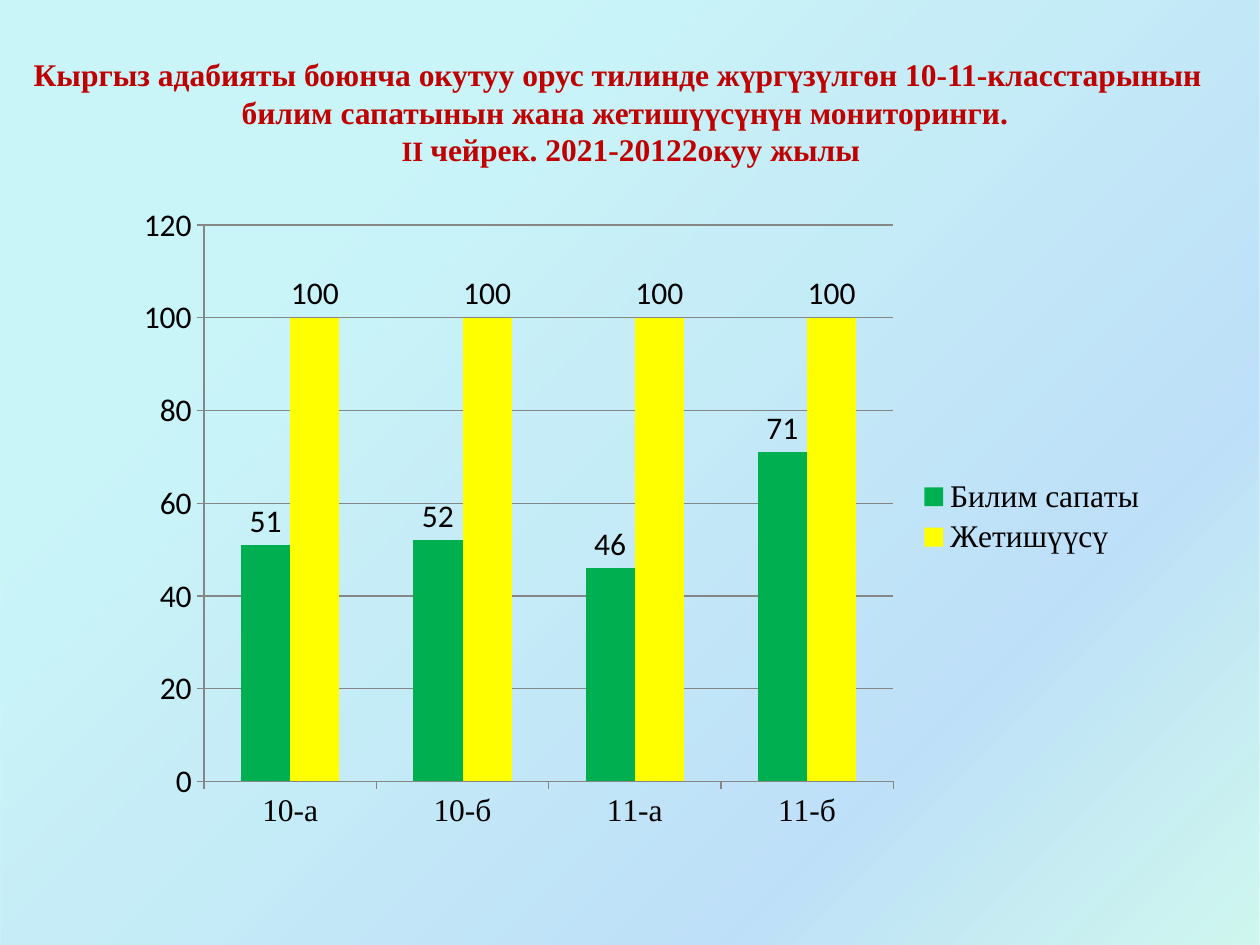
"""Build a slide with a column chart of class quality and achievement."""
from lxml.etree import SubElement
from pptx import Presentation
from pptx.chart.data import CategoryChartData
from pptx.dml.color import RGBColor
from pptx.enum.chart import XL_CHART_TYPE as CT, XL_LABEL_POSITION as LP
from pptx.enum.chart import XL_LEGEND_POSITION as LEG, XL_TICK_MARK as TICK
from pptx.enum.shapes import MSO_SHAPE as SHAPE
from pptx.enum.text import MSO_ANCHOR as ANCHOR, PP_ALIGN as ALIGN
from pptx.oxml.ns import qn
from pptx.util import Pt

PX = 914400 / 126
RED = RGBColor(0xC0, 0x00, 0x00)
GREEN = RGBColor(0x00, 0xB0, 0x50)
YELLOW = RGBColor(0xFF, 0xFF, 0x00)
BLACK = RGBColor(0x00, 0x00, 0x00)
GREY = RGBColor(0x86, 0x86, 0x86)
AQUA = RGBColor(0x21, 0xD6, 0xE0)
BLUE = RGBColor(0x00, 0x87, 0xE6)
MINT = RGBColor(0x03, 0xD4, 0xA8)
NAVY = RGBColor(0x00, 0x5C, 0xBF)
SERIF, SANS = "Times New Roman", "Calibri"

STOPS = [(25, AQUA, 23), (75, BLUE, 25), (100, MINT, 18), (100, NAVY, 26)]
TITLE = [
    ([("Кыргыз адабияты боюнча окутуу орус тилинде жүргүзүлгөн "
       "10-11-класстарынын", 18)], "marR", 24),
    ([("билим сапатынын жана жетишүүсүнүн мониторинги.", 18)], "marR", 10),
    ([("II ", 16), ("чейрек. 2021-20122окуу жылы", 18)], "marL", 12),
]
CLASSES = ["10-а", "10-б", "11-а", "11-б"]
SERIES = [("Билим сапаты", [51, 52, 46, 71], GREEN),
          ("Жетишүүсү", [100, 100, 100, 100], YELLOW)]


def px(*lengths):
    return [round(n * PX) for n in lengths]


def add_backdrop(s):
    sp = s.shapes.add_shape(SHAPE.RECTANGLE, *px(0, 0, 1260, 966))
    sp.shadow.inherit = False
    sp.line.fill.background()
    sp.fill.gradient()
    sp.fill.gradient_angle = 315
    stops = sp._element.spPr.find(qn("a:gradFill")).find(qn("a:gsLst"))
    for old in list(stops):
        stops.remove(old)
    for pos, color, alpha in STOPS:
        gs = SubElement(stops, qn("a:gs"), pos=str(pos * 1000))
        clr = SubElement(gs, qn("a:srgbClr"), val=str(color))
        SubElement(clr, qn("a:alpha"), val=str(alpha * 1000))


def add_title(s):
    tf = s.shapes.add_textbox(*px(15, 29, 1230, 165)).text_frame
    tf.word_wrap = True
    tf.vertical_anchor = ANCHOR.MIDDLE
    for i, (runs, margin, size) in enumerate(TITLE):
        p = tf.add_paragraph() if i else tf.paragraphs[0]
        p.alignment = ALIGN.CENTER
        p._p.get_or_add_pPr().set(margin, str(px(size)[0]))
        for text, points in runs:
            r = p.add_run()
            r.text = text
            r.font.name, r.font.size, r.font.bold = SERIF, Pt(points), True
            r.font.color.rgb = RED


def set_font(font, name):
    font.name, font.size = name, Pt(18)
    font.color.rgb = BLACK


def style_axis(axis, font_name):
    axis.major_tick_mark = TICK.OUTSIDE
    axis.minor_tick_mark = TICK.NONE
    axis.format.line.color.rgb = GREY
    set_font(axis.tick_labels.font, font_name)


def add_column_chart(s):
    data = CategoryChartData()
    data.categories = CLASSES
    for name, values, _ in SERIES:
        data.add_series(name, values)
    chart = s.shapes.add_chart(CT.COLUMN_CLUSTERED, *px(123, 193, 1037, 648),
                               data).chart
    chart.has_title = False
    set_font(chart.font, SANS)
    style_axis(chart.category_axis, SERIF)
    axis = chart.value_axis
    style_axis(axis, SANS)
    axis.minimum_scale, axis.maximum_scale, axis.major_unit = 0, 120, 20
    axis.major_gridlines.format.line.color.rgb = GREY
    chart.has_legend = True
    chart.legend.position = LEG.RIGHT
    chart.legend.include_in_layout = False
    set_font(chart.legend.font, SERIF)
    plot = chart.plots[0]
    plot.gap_width, plot.overlap, plot.vary_by_categories = 150, 0, False
    for series, (_, _, color) in zip(plot.series, SERIES):
        series.format.fill.solid()
        series.format.fill.fore_color.rgb = color
        labels = series.data_labels
        labels.show_value = True
        labels.position = LP.OUTSIDE_END
        set_font(labels.font, SANS)


def main():
    prs = Presentation()
    prs.slide_width, prs.slide_height = px(1260, 945)
    s = prs.slides.add_slide(prs.slide_layouts[6])
    add_backdrop(s)
    add_title(s)
    add_column_chart(s)
    prs.save("out.pptx")


if __name__ == "__main__":
    main()
